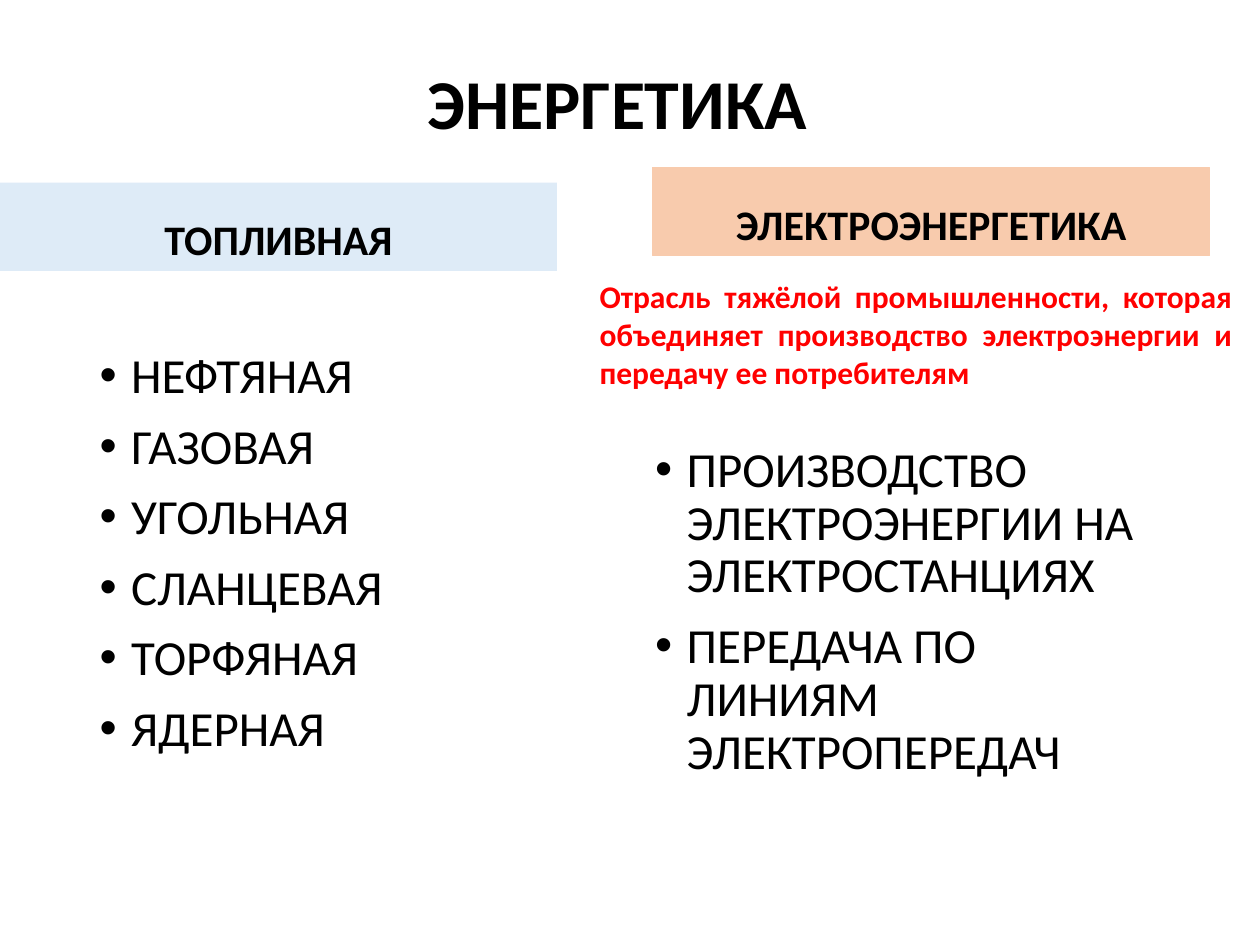
from dataclasses import dataclass
from typing import Optional

from lxml.etree import SubElement
from pptx import Presentation
from pptx.dml.color import RGBColor
from pptx.enum.text import MSO_ANCHOR, MSO_AUTO_SIZE, PP_ALIGN
from pptx.oxml.ns import qn
from pptx.util import Inches, Pt


@dataclass(frozen=True)
class Theme:
    face: str = "Calibri"
    black: str = "000000"
    red: str = "FF0000"
    blue: str = "DEEBF7"
    peach: str = "F8CBAD"
    title: int = 40
    head: int = 24
    list: int = 28
    note: int = 18
    gap: int = 10


THEME = Theme()


@dataclass(frozen=True)
class Block:
    """Text with its place and look."""
    lines: tuple[str, ...]
    box: tuple[float, float, float, float]
    size: int
    color: str = THEME.black
    bold: bool = True
    align: PP_ALIGN = PP_ALIGN.CENTER
    anchor: MSO_ANCHOR = MSO_ANCHOR.BOTTOM
    spacing: float = 0.9
    fill: Optional[str] = None
    edge: Optional[str] = None
    bullet: bool = False


def bullets(lines: tuple[str, ...], box: tuple[float, float, float, float]) -> Block:
    return Block(lines, box, THEME.list, bold=False, align=PP_ALIGN.LEFT,
                 anchor=MSO_ANCHOR.TOP, bullet=True)


def mark(para) -> None:
    """Give a paragraph a hanging bullet."""
    props = para._p.get_or_add_pPr()
    props.set("marL", str(Inches(0.25)))
    props.set("indent", str(-Inches(0.25)))
    SubElement(props, qn("a:buFont"), typeface="Arial")
    SubElement(props, qn("a:buChar"), char="•")


def draw(shape, block: Block) -> None:
    """Place a shape and write its block of text."""
    places = zip(("left", "top", "width", "height"), block.box)
    for name, value in places:
        setattr(shape, name, Inches(value))
    if block.fill:
        shape.fill.solid()
        shape.fill.fore_color.rgb = RGBColor.from_string(block.fill)
    if block.edge:
        shape.line.color.rgb = RGBColor.from_string(block.edge)
        shape.line.width = Pt(0.75)

    frame = shape.text_frame
    frame.text = "\n".join(block.lines)
    setup = {"word_wrap": True, "auto_size": MSO_AUTO_SIZE.NONE,
             "vertical_anchor": block.anchor}
    for name, value in setup.items():
        setattr(frame, name, value)

    font = {"name": THEME.face, "size": Pt(block.size), "bold": block.bold}
    for row, para in enumerate(frame.paragraphs):
        if block.bullet:
            mark(para)
        style = {"alignment": block.align, "line_spacing": block.spacing,
                 "space_before": Pt(THEME.gap if row else 0)}
        for name, value in style.items():
            setattr(para, name, value)
        for run in para.runs:
            for name, value in font.items():
                setattr(run.font, name, value)
            run.font.color.rgb = RGBColor.from_string(block.color)


# Blocks by placeholder index of the comparison layout
BLOCKS = {
    0: Block(("ЭНЕРГЕТИКА",), (0.59, 0.12, 8.62, 1.45), THEME.title,
             anchor=MSO_ANCHOR.MIDDLE),
    1: Block(("ТОПЛИВНАЯ",), (0, 1.45, 4.42, 0.7), THEME.head, fill=THEME.blue),
    2: bullets(("НЕФТЯНАЯ", "ГАЗОВАЯ", "УГОЛЬНАЯ", "СЛАНЦЕВАЯ", "ТОРФЯНАЯ",
                "ЯДЕРНАЯ"), (0.69, 2.74, 4.23, 4.03)),
    3: Block(("ЭЛЕКТРОЭНЕРГЕТИКА",), (5.18, 1.33, 4.42, 0.7), THEME.head,
             fill=THEME.peach, edge=THEME.peach),
    4: bullets(("ПРОИЗВОДСТВО ЭЛЕКТРОЭНЕРГИИ НА ЭЛЕКТРОСТАНЦИЯХ",
                "ПЕРЕДАЧА ПО ЛИНИЯМ ЭЛЕКТРОПЕРЕДАЧ"), (5.1, 3.48, 4.25, 3.1)),
}
NOTE = Block(("Отрасль тяжёлой промышленности, которая объединяет производство "
              "электроэнергии и передачу ее потребителям",),
             (4.66, 2.15, 5.22, 1.01), THEME.note, THEME.red,
             align=PP_ALIGN.JUSTIFY, anchor=MSO_ANCHOR.TOP, spacing=1.0)


def main() -> None:
    deck = Presentation()
    deck.slide_width, deck.slide_height = Inches(10), Inches(7.5)
    slide = deck.slides.add_slide(deck.slide_layouts.get_by_name("Comparison"))

    # Title, column headings and lists
    holders = {shape.placeholder_format.idx: shape for shape in slide.placeholders}
    for key, block in BLOCKS.items():
        draw(holders[key], block)

    # Definition under the right heading
    box = slide.shapes.add_textbox(*map(Inches, NOTE.box))
    draw(box, NOTE)
    box.text_frame.auto_size = MSO_AUTO_SIZE.SHAPE_TO_FIT_TEXT

    deck.save("out.pptx")


if __name__ == "__main__":
    main()
